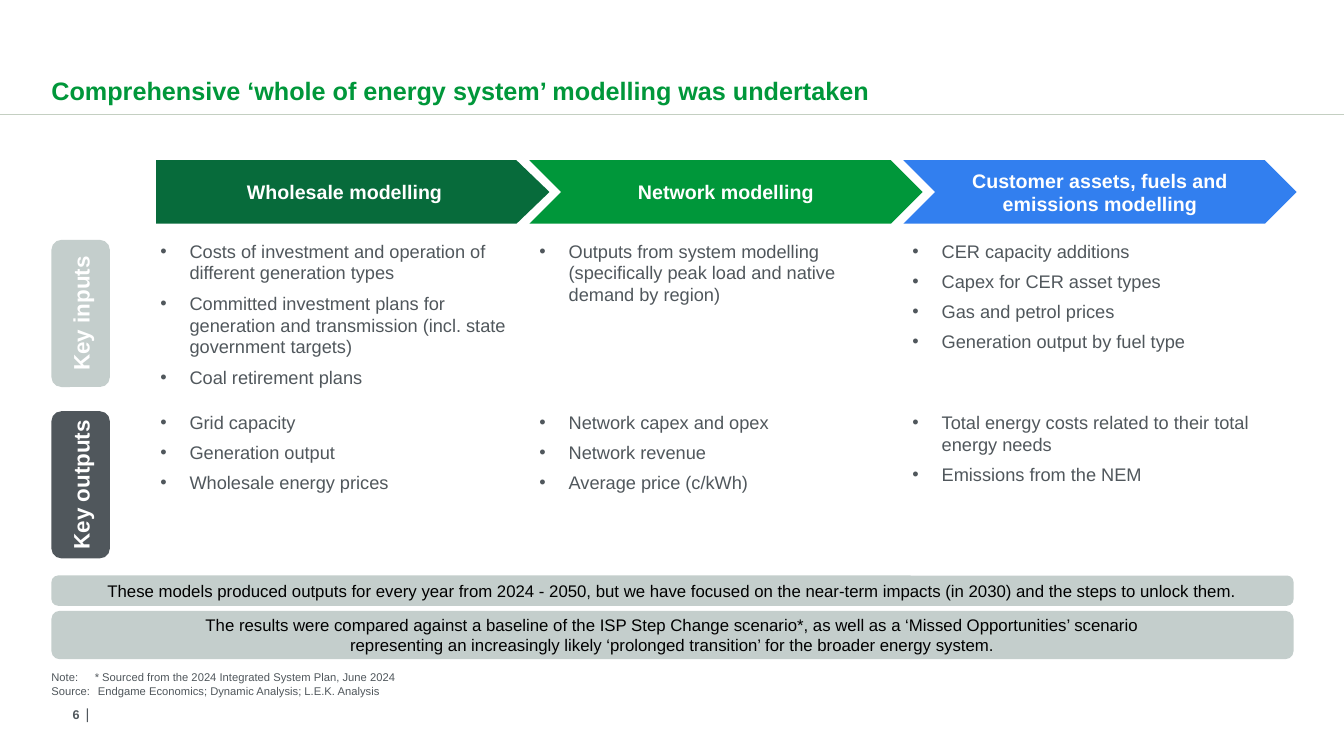
from dataclasses import dataclass

from lxml.etree import SubElement
from pptx import Presentation
from pptx.dml.color import RGBColor
from pptx.enum.shapes import MSO_CONNECTOR, MSO_SHAPE
from pptx.enum.text import MSO_ANCHOR, PP_ALIGN
from pptx.oxml.ns import qn
from pptx.util import Inches, Pt

COLORS = {
    "forest": "076B3B",
    "green": "00973A",
    "blue": "327FEF",
    "mist": "C4CECC",
    "slate": "50575C",
    "rule": "C4CFC2",
    "white": "FFFFFF",
    "black": "000000",
}
FONT = "Arial"
LEFT, FULL_W = 0.51, 12.32
STAGE_TOP, STAGE_W, STAGE_H = 1.59, 3.9, 0.63
ROW_H, LABEL_W, LIST_W = 1.46, 0.58, 3.52
INSETS = (0.04, 0, 0.04, 0)


@dataclass
class Style:
    size: float
    color: str
    bold: bool = False
    align: PP_ALIGN = PP_ALIGN.LEFT
    anchor: MSO_ANCHOR = MSO_ANCHOR.MIDDLE
    insets: tuple[float, float, float, float] = (0, 0, 0, 0)
    wrap: bool = True
    hanging: float = 0
    space_after: float = 0
    bullet: bool = False


@dataclass
class Stage:
    """One modelling step: its arrow and the lists below it."""
    title: str
    shape: MSO_SHAPE
    adjust: float
    color: str
    left: float
    list_left: float
    inputs: list[str]
    outputs: list[str]


@dataclass
class RowLabel:
    text: str
    color: str
    top: float


@dataclass
class Banner:
    lines: str
    top: float
    height: float
    adjust: float


TITLE = Style(18, "green", True, anchor=MSO_ANCHOR.BOTTOM, insets=(0, 0.25, 0, 0))
STAGE = Style(14, "white", True, PP_ALIGN.CENTER, insets=INSETS)
LABEL = Style(16, "white", True, PP_ALIGN.CENTER, insets=INSETS)
LIST = Style(13, "slate", anchor=MSO_ANCHOR.TOP, insets=INSETS,
             hanging=0.29, space_after=6, bullet=True)
BANNER = Style(12, "black", align=PP_ALIGN.CENTER, insets=INSETS)
NOTE = Style(8, "slate", anchor=MSO_ANCHOR.BOTTOM, hanging=0.43)
PAGE = Style(9, "slate", True, PP_ALIGN.RIGHT)
PAGE_BAR = Style(10.5, "slate", anchor=MSO_ANCHOR.BOTTOM, wrap=False)

STAGES = [
    Stage("Wholesale modelling", MSO_SHAPE.PENTAGON, 0.52, "forest", 1.55, 1.55,
          ["Costs of investment and operation of different generation types",
           "Committed investment plans for generation and transmission "
           "(incl. state government targets)",
           "Coal retirement plans"],
          ["Grid capacity", "Generation output", "Wholesale energy prices"]),
    Stage("Network modelling", MSO_SHAPE.CHEVRON, 0.5, "green", 5.25, 5.31,
          ["Outputs from system modelling (specifically peak load and "
           "native demand by region)"],
          ["Network capex and opex", "Network revenue", "Average price (c/kWh)"]),
    Stage("Customer assets, fuels and emissions modelling", MSO_SHAPE.CHEVRON, 0.5,
          "blue", 8.96, 9.01,
          ["CER capacity additions", "Capex for CER asset types",
           "Gas and petrol prices", "Generation output by fuel type"],
          ["Total energy costs related to their total energy needs",
           "Emissions from the NEM"]),
]
INPUT_ROW = RowLabel("Key inputs", "mist", 2.38)
OUTPUT_ROW = RowLabel("Key outputs", "slate", 4.08)
BANNERS = [
    Banner("These models produced outputs for every year from 2024 - 2050, but we have "
           "focused on the near-term impacts (in 2030) and the steps to unlock them.",
           5.71, 0.3, 0.22),
    Banner("The results were compared against a baseline of the ISP Step Change "
           "scenario*, as well as a ‘Missed Opportunities’ scenario\n"
           "representing an increasingly likely ‘prolonged transition’ for the "
           "broader energy system.", 6.06, 0.48, 0.17),
]
NOTES = ["Note:\t* Sourced from the 2024 Integrated System Plan, June 2024",
         "Source:\t Endgame Economics; Dynamic Analysis; L.E.K. Analysis"]


def rgb(name: str) -> RGBColor:
    return RGBColor.from_string(COLORS[name])


def format_paragraph(p, style: Style) -> None:
    p.alignment = style.align
    p.space_after = Pt(style.space_after)
    pPr = p._p.get_or_add_pPr()
    if style.hanging:
        pPr.set("marL", str(Inches(style.hanging)))
        pPr.set("indent", str(-Inches(style.hanging)))
    if style.bullet:
        clr = SubElement(pPr, qn("a:buClr"))
        SubElement(clr, qn("a:srgbClr")).set("val", COLORS[style.color])
        SubElement(pPr, qn("a:buFont")).set("typeface", FONT)
        SubElement(pPr, qn("a:buChar")).set("char", "•")


def write(sp, paragraphs: list[str], style: Style) -> None:
    """Fill a shape with paragraphs; a newline is a break within one."""
    tf = sp.text_frame
    tf.word_wrap = style.wrap
    tf.vertical_anchor = style.anchor
    tf.margin_left, tf.margin_top, tf.margin_right, tf.margin_bottom = map(
        Inches, style.insets)
    for i, text in enumerate(paragraphs):
        p = tf.add_paragraph() if i else tf.paragraphs[0]
        format_paragraph(p, style)
        for j, line in enumerate(text.split("\n")):
            if j:
                p.add_line_break()
            r = p.add_run()
            r.text = line
            r.font.name = FONT
            r.font.size = Pt(style.size)
            r.font.bold = style.bold
            r.font.color.rgb = rgb(style.color)


def add_text(s, left: float, top: float, width: float, height: float,
             paragraphs: list[str], style: Style) -> None:
    sp = s.shapes.add_textbox(*map(Inches, (left, top, width, height)))
    write(sp, paragraphs, style)


def add_block(s, shape: MSO_SHAPE, left: float, top: float, width: float,
              height: float, adjust: float, color: str, text: str, style: Style):
    sp = s.shapes.add_shape(shape, *map(Inches, (left, top, width, height)))
    sp.adjustments[0] = adjust
    sp.shadow.inherit = False
    sp.fill.solid()
    sp.fill.fore_color.rgb = rgb(color)
    sp.line.fill.background()
    write(sp, [text], style)
    return sp


def add_rule(s, top: float, width: float) -> None:
    line = s.shapes.add_connector(MSO_CONNECTOR.STRAIGHT, 0, Inches(top),
                                  Inches(width), Inches(top))
    line.line.color.rgb = rgb("rule")
    line.line.width = Pt(0.5)
    SubElement(line.element.spPr, qn("a:effectLst"))


def main() -> None:
    prs = Presentation()
    prs.slide_width, prs.slide_height = Inches(13.33), Inches(7.5)
    s = prs.slides.add_slide(prs.slide_layouts[6])

    add_rule(s, 1.13, 13.33)
    add_text(s, LEFT, 0.26, FULL_W, 0.79,
             ["Comprehensive ‘whole of energy system’ modelling was undertaken"], TITLE)

    for stage in STAGES:
        add_block(s, stage.shape, stage.left, STAGE_TOP, STAGE_W, STAGE_H,
                  stage.adjust, stage.color, stage.title, STAGE)
        for row, items in ((INPUT_ROW, stage.inputs), (OUTPUT_ROW, stage.outputs)):
            add_text(s, stage.list_left, row.top, LIST_W, ROW_H, items, LIST)

    for row in (INPUT_ROW, OUTPUT_ROW):
        sp = add_block(s, MSO_SHAPE.ROUNDED_RECTANGLE, LEFT, row.top, LABEL_W, ROW_H,
                       0.17, row.color, row.text, LABEL)
        sp.element.txBody.bodyPr.set("vert", "vert270")

    for banner in BANNERS:
        add_block(s, MSO_SHAPE.ROUNDED_RECTANGLE, LEFT, banner.top, FULL_W,
                  banner.height, banner.adjust, "mist", banner.lines, BANNER)

    add_text(s, LEFT, 6.72, 10.91, 0.2, NOTES, NOTE)
    add_text(s, 0.38, 6.99, 0.41, 0.19, ["6"], PAGE)
    add_text(s, 0.85, 6.94, 0.89, 0.23, ["|"], PAGE_BAR)
    prs.save("out.pptx")


if __name__ == "__main__":
    main()
